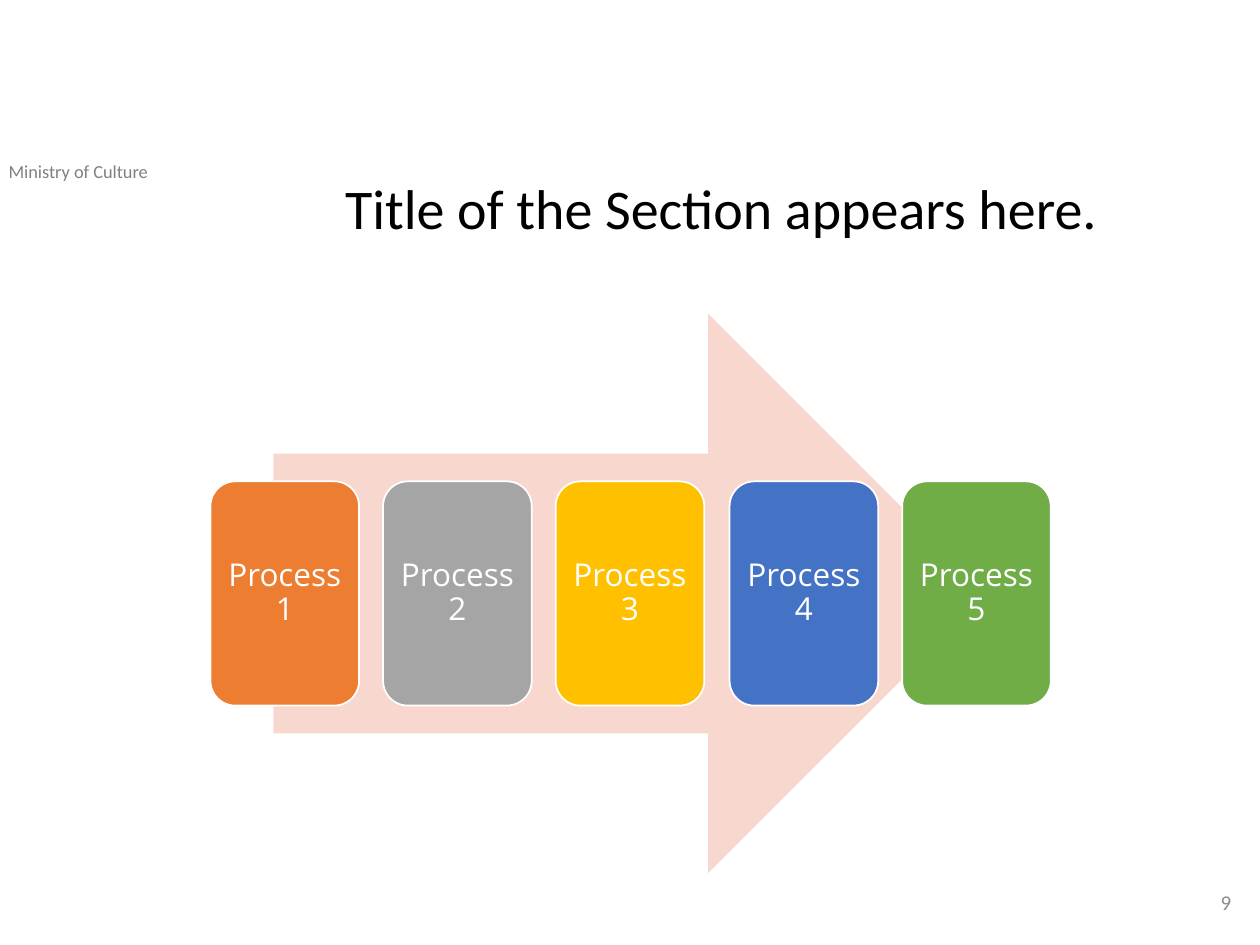
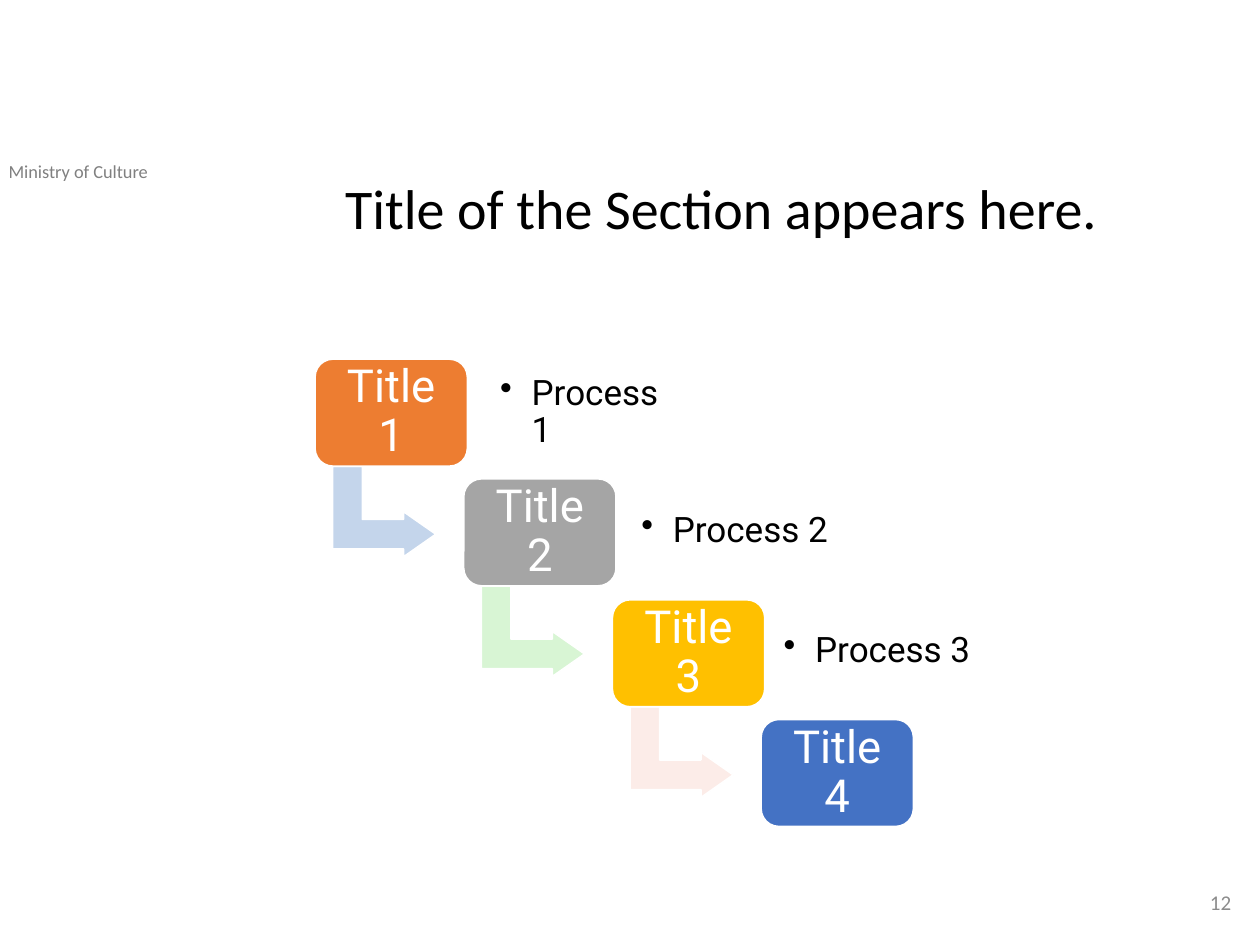
"""Builds two process slides: a row of steps on an arrow and a staircase of titles."""
from lxml.etree import SubElement
from pptx import Presentation
from pptx.dml.color import RGBColor
from pptx.enum.shapes import MSO_SHAPE
from pptx.enum.text import MSO_ANCHOR, PP_ALIGN
from pptx.oxml.ns import qn
from pptx.util import Pt

PX = 9144
BLACK = RGBColor(0x00, 0x00, 0x00)
WHITE = RGBColor(0xFF, 0xFF, 0xFF)
HEADER_GRAY = RGBColor(0x80, 0x80, 0x80)
NUMBER_GRAY = RGBColor(0x8C, 0x8C, 0x8C)
ORANGE = RGBColor(0xED, 0x7D, 0x31)
GRAY = RGBColor(0xA5, 0xA5, 0xA5)
GOLD = RGBColor(0xFF, 0xC0, 0x00)
BLUE = RGBColor(0x44, 0x72, 0xC4)
GREEN = RGBColor(0x70, 0xAD, 0x47)
PALE_ROSE = RGBColor(0xF8, 0xD7, 0xCE)
PALE_BLUE = RGBColor(0xC4, 0xD5, 0xEB)
PALE_GREEN = RGBColor(0xD8, 0xF5, 0xD4)
PALE_PINK = RGBColor(0xFC, 0xEC, 0xE8)
CARD_COLORS = [ORANGE, GRAY, GOLD, BLUE, GREEN]


class Deck:
    """Holds the presentation, the shared style and the current slide."""

    def __init__(self):
        self.presentation = Presentation()
        self.presentation.slide_width = 1000 * PX
        self.presentation.slide_height = 750 * PX
        self.slide = None

    def add_slide(self, title, number):
        self.slide = self.presentation.slides.add_slide(self.presentation.slide_layouts[6])
        self.text((-3, 122, 218, 28), "Ministry of Culture", 10.5, "Calibri", HEADER_GRAY)
        self.text((762, 696, 225, 40), str(number), 12, "Calibri", NUMBER_GRAY,
                  align=PP_ALIGN.RIGHT, anchor=MSO_ANCHOR.MIDDLE)
        self.text((264, 139, 654, 79), title, 32, "Calibri", BLACK, spacing=0.9)

    def fill_text(self, shape, text, size, font, color, align=PP_ALIGN.LEFT,
                  anchor=MSO_ANCHOR.TOP, spacing=1.0, inset=None, bullet=False):
        frame = shape.text_frame
        frame.word_wrap = True
        frame.vertical_anchor = anchor
        if inset is not None:
            frame.margin_left = frame.margin_right = inset * PX
            frame.margin_top = frame.margin_bottom = inset * PX
        frame.text = text
        paragraph = frame.paragraphs[0]
        paragraph.alignment = align
        paragraph.line_spacing = spacing
        if bullet:
            properties = paragraph._p.get_or_add_pPr()
            properties.set("marL", str(25 * PX))
            properties.set("indent", str(-25 * PX))
            SubElement(properties, qn("a:buChar")).set("char", "•")
        run_font = paragraph.runs[0].font
        run_font.size = Pt(size)
        run_font.name = font
        run_font.color.rgb = color

    def text(self, box, text, size, font, color, **style):
        shape = self.slide.shapes.add_textbox(*(length * PX for length in box))
        self.fill_text(shape, text, size, font, color, **style)

    def shape(self, kind, box, fill, outlined=True, adjustments=(), rotation=0):
        shape = self.slide.shapes.add_shape(kind, *(length * PX for length in box))
        shape.shadow.inherit = False
        shape.fill.solid()
        shape.fill.fore_color.rgb = fill
        if outlined:
            shape.line.color.rgb = WHITE
            shape.line.width = Pt(1)
        else:
            shape.line.fill.background()
        for index, value in enumerate(adjustments):
            shape.adjustments[index] = value
        shape.rotation = rotation
        return shape

    def card(self, box, text, fill, size, font, inset):
        shape = self.shape(MSO_SHAPE.ROUNDED_RECTANGLE, box, fill, adjustments=[0.167])
        self.fill_text(shape, text, size, font, WHITE, align=PP_ALIGN.CENTER,
                       anchor=MSO_ANCHOR.MIDDLE, spacing=0.9, inset=inset)

    def bullet(self, box, text):
        self.text(box, text, 20, "Roboto", BLACK, anchor=MSO_ANCHOR.MIDDLE,
                  spacing=0.9, inset=11, bullet=True)

    def bent_arrow(self, box, fill):
        self.shape(MSO_SHAPE.BENT_UP_ARROW, box, fill,
                   adjustments=[0.328, 0.25, 0.358], rotation=90)


def build_process_row(deck):
    deck.add_slide("Title of the Section appears here.", 9)
    deck.shape(MSO_SHAPE.RIGHT_ARROW, (217, 249, 567, 444), PALE_ROSE, outlined=False)
    for index, color in enumerate(CARD_COLORS):
        left = 167 + round(137.2 * index)
        deck.card((left, 382, 118, 178), f"Process {index + 1}", color, 18, "Open Sans", 7)


def build_staircase(deck):
    deck.add_slide("Title of the Section appears here.", 12)
    arrow_colors = [PALE_BLUE, PALE_GREEN, PALE_PINK]
    bullet_widths = [160, 235, 197]
    for index, color in enumerate(CARD_COLORS[:4]):
        across, down = 118 * index, round(95.4 * index)
        if index < len(arrow_colors):
            deck.bent_arrow((269 + across, 365 + down, 72, 82), arrow_colors[index])
        deck.card((250 + across, 285 + down, 121, 85), f"Title {index + 1}", color,
                  26, "Roboto", 11)
        if index < len(bullet_widths):
            deck.bullet((386 + round(112.5 * index), 293 + round(94.5 * index),
                         bullet_widths[index], 69), f"Process {index + 1}")


def main():
    deck = Deck()
    build_process_row(deck)
    build_staircase(deck)
    deck.presentation.save("out.pptx")


if __name__ == "__main__":
    main()
